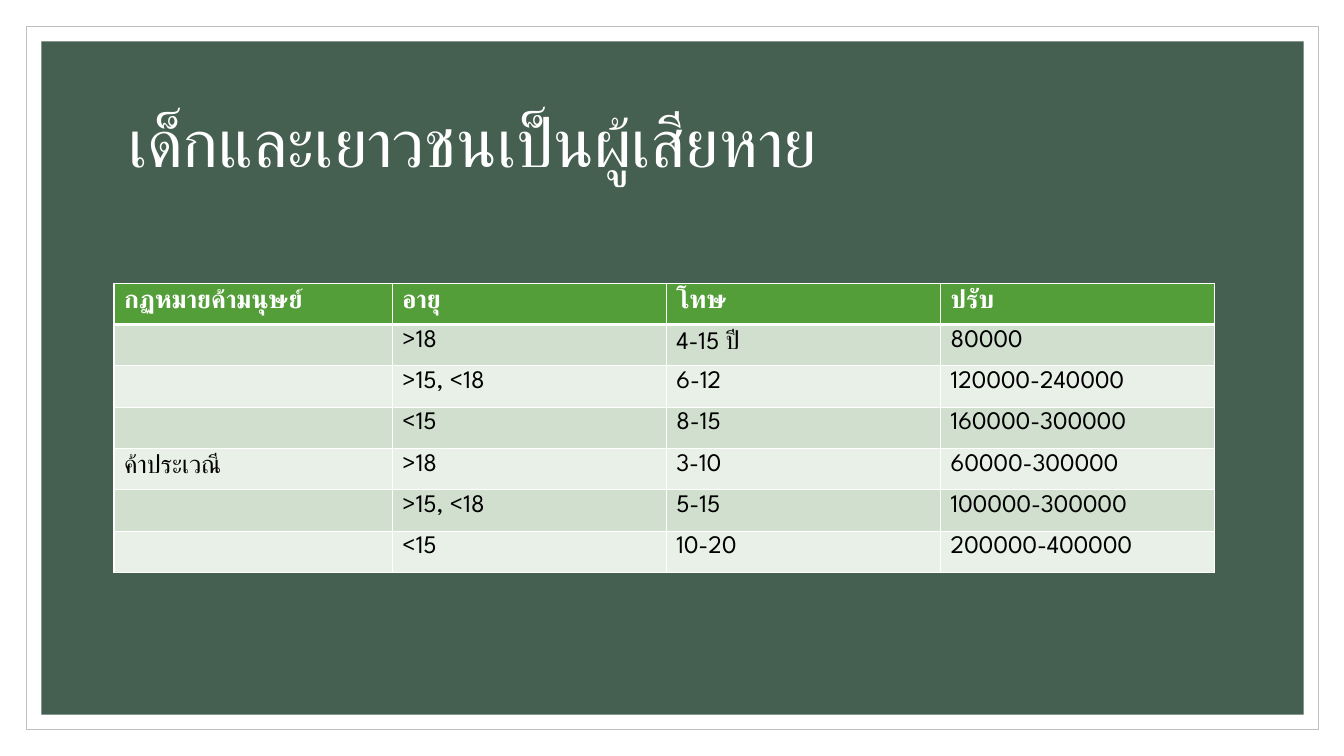
import pptx
import pptx.util
import pptx.dml.color
import pptx.enum.shapes
import pptx.enum.text
import pptx.oxml
import pptx.oxml.ns
from dataclasses import dataclass
from pptx.util import Inches


@dataclass(frozen=True)
class Theme:
    font: str = "League Spartan"
    white: str = "FFFFFF"
    black: str = "000000"
    frame: str = "BFBFBF"
    panel: str = "455F51"
    header: str = "549E39"
    bands: tuple = ("D1DFCE", "E9F0E8")
    title_size: int = 48
    table_size: int = 18


THEME = Theme()

ROWS = [
    ("กฏหมายค้ามนุษย์", "อายุ", "โทษ", "ปรับ"),
    ("", ">18", "4-15 ปี", "80000"),
    ("", ">15, <18", "6-12", "120000-240000"),
    ("", "<15", "8-15", "160000-300000"),
    ("ค้าประเวณี", ">18", "3-10", "60000-300000"),
    ("", ">15, <18", "5-15", "100000-300000"),
    ("", "<15", "10-20", "200000-400000"),
]
COLUMN_WIDTHS = (2.76, 2.72, 2.72, 2.72)
ROW_HEIGHT = 0.41


def rgb(value):
    return pptx.dml.color.RGBColor.from_string(value)


def write_text(tf, text, size, color, bold=False, spacing=1.0):
    p = tf.paragraphs[0]
    p.alignment = pptx.enum.text.PP_ALIGN.LEFT
    p.line_spacing = spacing
    r = p.add_run()
    r.text = text
    font = r.font
    font.name = THEME.font
    font.size = pptx.util.Pt(size)
    font.bold = bold
    font.color.rgb = rgb(color)


def add_panel(slide, left, top, width, height, fill, line=None):
    sp = slide.shapes.add_shape(
        pptx.enum.shapes.MSO_SHAPE.RECTANGLE,
        Inches(left), Inches(top), Inches(width), Inches(height))
    sp.shadow.inherit = False
    sp.fill.solid()
    sp.fill.fore_color.rgb = rgb(fill)
    if line:
        sp.line.color.rgb = rgb(line)
        sp.line.width = pptx.util.Pt(0.5)
    else:
        sp.line.fill.background()


def place_title(slide, text):
    sp = slide.shapes.title
    sp.left, sp.top = Inches(1.17), Inches(0.7)
    sp.width, sp.height = Inches(11), Inches(1.5)
    tf = sp.text_frame
    tf.word_wrap = True
    tf.auto_size = pptx.enum.text.MSO_AUTO_SIZE.NONE
    tf.vertical_anchor = pptx.enum.text.MSO_ANCHOR.MIDDLE
    write_text(tf, text, THEME.title_size, THEME.white, spacing=0.9)
    # Bring the title in front of the panels
    slide.shapes.element.append(sp.element)


def set_borders(cell, top, bottom):
    tcPr = cell._tc.get_or_add_tcPr()
    for side, points in (("L", 1), ("R", 1), ("T", top), ("B", bottom)):
        tcPr.append(pptx.oxml.parse_xml(
            f'<a:ln{side} {pptx.oxml.ns.nsdecls("a")} w="{pptx.util.Pt(points)}">'
            f'<a:solidFill><a:srgbClr val="{THEME.white}"/></a:solidFill>'
            f'</a:ln{side}>'))


def add_penalty_table(slide):
    table = slide.shapes.add_table(
        len(ROWS), len(COLUMN_WIDTHS), Inches(1.13), Inches(2.81),
        Inches(sum(COLUMN_WIDTHS)), Inches(ROW_HEIGHT * len(ROWS))).table
    for column, width in zip(table.columns, COLUMN_WIDTHS):
        column.width = Inches(width)
    for i, texts in enumerate(ROWS):
        table.rows[i].height = Inches(ROW_HEIGHT)
        header = i == 0
        fill = THEME.header if header else THEME.bands[(i - 1) % 2]
        for j, text in enumerate(texts):
            cell = table.cell(i, j)
            set_borders(cell, top=3 if i == 1 else 1, bottom=3 if header else 1)
            cell.fill.solid()
            cell.fill.fore_color.rgb = rgb(fill)
            if text:
                write_text(cell.text_frame, text, THEME.table_size,
                           THEME.white if header else THEME.black, bold=header)


def main():
    prs = pptx.Presentation()
    prs.slide_width, prs.slide_height = Inches(13.33), Inches(7.5)
    slide = prs.slides.add_slide(prs.slide_layouts.get_by_name("Title Only"))

    # Framed background
    add_panel(slide, 0.26, 0.26, 12.82, 6.98, THEME.white, line=THEME.frame)
    add_panel(slide, 0.41, 0.41, 12.52, 6.68, THEME.panel)

    # Content
    place_title(slide, "เด็กและเยาวชนเป็นผู้เสียหาย")
    add_penalty_table(slide)

    prs.save("out.pptx")


if __name__ == "__main__":
    main()
